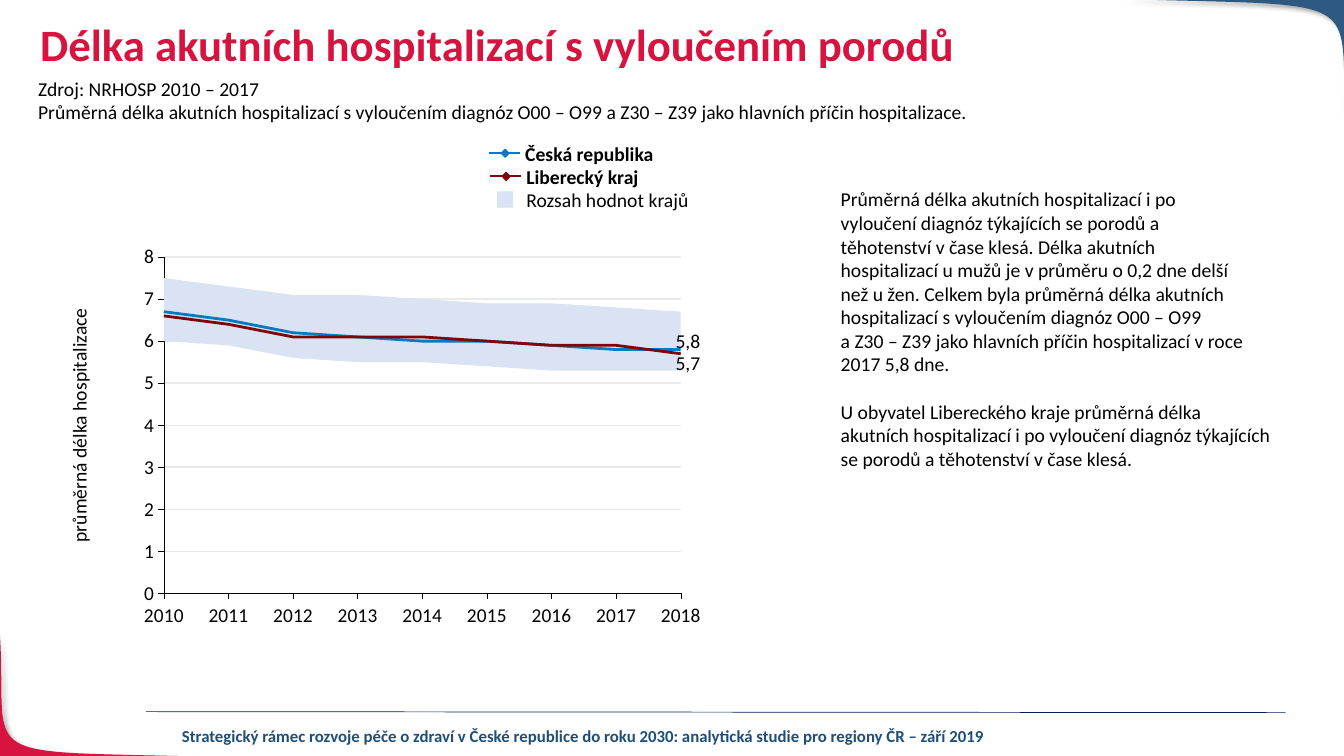
import lxml.etree
import pptx
import pptx.chart.data
import pptx.dml.color
import pptx.enum.chart
import pptx.enum.shapes
import pptx.enum.text
import pptx.oxml.ns
import pptx.util

Inches, Pt = pptx.util.Inches, pptx.util.Pt
Color = pptx.dml.color.RGBColor.from_string
qn = pptx.oxml.ns.qn
Sub = lxml.etree.SubElement
Align, Anchor = pptx.enum.text.PP_ALIGN, pptx.enum.text.MSO_ANCHOR
Shape, Link = pptx.enum.shapes.MSO_SHAPE, pptx.enum.shapes.MSO_CONNECTOR
Mark = pptx.enum.chart.XL_TICK_MARK


class theme:
    font, plain = "Calibri", "Arial"
    black, red, corner, foot, rule = "000000", "D71440", "2E5980", "1F4E79", "002060"
    nation, region, band, grid = "037BC1", "7F0506", "DAE3F3", "EAEAEA"
    title, body, small, tiny = Pt(32), Pt(14), Pt(12), Pt(8)


deck = pptx.Presentation()
deck.slide_width, deck.slide_height = Inches(13.33), Inches(7.5)
slide = deck.slides.add_slide(deck.slide_layouts[6])


def write(text, left, top, width, height, size=theme.body, color=theme.black, bold=False,
          align=Align.LEFT, anchor=Anchor.TOP, inset=True, wrap=True, space=None, turn=0, gap=None):
    """Each line is a paragraph; gap is the number of the line with space before it."""
    box = slide.shapes.add_textbox(Inches(left), Inches(top), Inches(width), Inches(height))
    box.rotation = turn
    frame = box.text_frame
    frame.word_wrap, frame.vertical_anchor = wrap, anchor
    if not inset:
        frame.margin_left = frame.margin_right = frame.margin_top = frame.margin_bottom = 0
    frame.text = text
    for count, para in enumerate(frame.paragraphs):
        para.alignment, para.line_spacing = align, space
        if count == gap:
            para.space_before = Pt(17)
        font = para.runs[0].font
        font.name, font.size, font.bold = theme.font, size, bold
        font.color.rgb = Color(color)


def rule(shapes, start, end, color, weight):
    line = shapes.add_connector(Link.STRAIGHT, *map(Inches, start + end))
    line.line.color.rgb, line.line.width = Color(color), Pt(weight)
    Sub(line._element.spPr, qn("a:effectLst"))


# Corner ornaments: a Bezier edge closed through the slide corner
corners = [
    (((2.13, 7.51), (-0.34, 7.44), (0.08, 7.59), (0, 6.3)), (-0.01, 7.51), theme.red),
    (((11.11, -0.01), (13.7, 0.07), (13.26, -0.1), (13.35, 1.42)), (13.35, -0.01), theme.corner),
]
steps = 40
for curve, tip, color in corners:
    dots = []
    for step in range(steps + 1):
        t = step / steps
        parts = ((1 - t) ** 3, 3 * t * (1 - t) ** 2, 3 * t * t * (1 - t), t ** 3)
        dots.append([Inches(sum(p * c[axis] for p, c in zip(parts, curve))) for axis in (0, 1)])
    dots.append([Inches(v) for v in tip])
    edge = slide.shapes.build_freeform(*dots[0])
    edge.add_line_segments(dots[1:], close=True)
    leaf = edge.convert_to_shape()
    leaf.fill.solid()
    leaf.fill.fore_color.rgb = Color(color)
    leaf.line.fill.background()
    leaf.shadow.inherit = False
    cast = Sub(leaf._element.spPr.find(qn("a:effectLst")), qn("a:outerShdw"),
               blurRad=str(Pt(4)), dist=str(Pt(3)), dir="2700000", algn="tl", rotWithShape="0")
    Sub(Sub(cast, qn("a:srgbClr"), val=theme.black), qn("a:alpha"), val="40000")

# Footer
rule(slide.shapes, (1.45, 7.06), (12.75, 7.07), theme.rule, 0.5)
write("Strategický rámec rozvoje péče o zdraví v České republice do roku 2030: "
      "analytická studie pro regiony ČR – září 2019", 1.68, 7.15, 8.21, 0.3,
      size=theme.small, color=theme.foot, bold=True, align=Align.CENTER)

# Title, source and comment
write("Délka akutních hospitalizací s vyloučením porodů", 0.3, 0.18, 11.5, 0.69,
      size=theme.title, color=theme.red, bold=True, space=0.9)
write("""Zdroj: NRHOSP 2010 – 2017
Průměrná délka akutních hospitalizací s vyloučením diagnóz O00 – O99 a Z30 – Z39 jako hlavních příčin hospitalizace.""",
      0.28, 0.71, 9.53, 0.57)
write("""Průměrná délka akutních hospitalizací i po
vyloučení diagnóz týkajících se porodů a
těhotenství v čase klesá. Délka akutních
hospitalizací u mužů je v průměru o 0,2 dne delší
než u žen. Celkem byla průměrná délka akutních
hospitalizací s vyloučením diagnóz O00 – O99
a Z30 – Z39 jako hlavních příčin hospitalizací v roce
2017 5,8 dne.
U obyvatel Libereckého kraje průměrná délka
akutních hospitalizací i po vyloučení diagnóz týkajících
se porodů a těhotenství v čase klesá.""", 8.24, 1.81, 4.54, 4.56, gap=8)

# Chart: two stacked areas make the band, two lines lie over it
data = pptx.chart.data.CategoryChartData(number_format="0.0")
data.categories = [str(year) for year in range(2010, 2019)]
data.add_series("Minimum krajů", (6, 5.9, 5.6, 5.5, 5.5, 5.4, 5.3, 5.3, 5.3))
data.add_series("Rozsah hodnot krajů", (1.5, 1.4, 1.5, 1.6, 1.5, 1.5, 1.6, 1.5, 1.4))
data.add_series("Česká republika", (6.7, 6.5, 6.2, 6.1, 6, 6, 5.9, 5.8, 5.8))
data.add_series("Liberecký kraj", (6.6, 6.4, 6.1, 6.1, 6.1, 6, 5.9, 5.9, 5.7))
chart = slide.shapes.add_chart(
    pptx.enum.chart.XL_CHART_TYPE.AREA_STACKED,
    Inches(1.03), Inches(2.28), Inches(5.92), Inches(4.17), data).chart
chart.has_legend = chart.has_title = False
chart.font.name, chart.font.size = theme.plain, theme.tiny
chart.font.color.rgb = Color(theme.black)
areas = chart.plots[0]
areas.vary_by_categories = False
base, span, *trends = areas.series
base.format.fill.background()
base.format.line.fill.background()
span.format.fill.solid()
span.format.fill.fore_color.rgb = Color(theme.band)
span.format.line.fill.background()

# Move the trends into a line plot on the same axes
plot = areas._element.getparent()
lines = Sub(plot, qn("c:lineChart"))
areas._element.addnext(lines)
Sub(lines, qn("c:grouping"), val="standard")
Sub(lines, qn("c:varyColors"), val="0")
for trend in trends:
    lines.append(trend._element)
Sub(lines, qn("c:marker"), val="1")
for axis in areas._element.findall(qn("c:axId")):
    Sub(lines, qn("c:axId"), val=axis.get("val"))
for trend, color in zip(chart.plots[1].series, (theme.nation, theme.region)):
    trend.format.line.color.rgb, trend.format.line.width = Color(color), Pt(2)
    trend.marker.style = pptx.enum.chart.XL_MARKER_STYLE.NONE
    trend.smooth = False

# Axes and plot area
years, days = chart.category_axis, chart.value_axis
for axis in (years, days):
    axis.major_tick_mark, axis.minor_tick_mark = Mark.OUTSIDE, Mark.NONE
    axis.format.line.color.rgb, axis.format.line.width = Color(theme.black), Pt(0.25)
    font = axis.tick_labels.font
    font.name, font.size = theme.font, theme.body
    font.color.rgb = Color(theme.black)
years.has_major_gridlines = False
days.minimum_scale, days.maximum_scale, days.major_unit = 0, 8, 1
days.tick_labels.number_format = "#,##0"
days.tick_labels.number_format_is_linked = False
days.has_major_gridlines = True
grid = days.major_gridlines.format.line
grid.color.rgb, grid.width = Color(theme.grid), Pt(1)
days._element.find(qn("c:crossBetween")).set("val", "midCat")
for old in plot.findall(qn("c:layout")):
    plot.remove(old)
layout = Sub(plot, qn("c:layout"))
plot.insert(0, layout)
place = Sub(layout, qn("c:manualLayout"))
for tag, val in (("layoutTarget", "inner"), ("xMode", "edge"), ("yMode", "edge"),
                 ("x", "0.102"), ("y", "0.065"), ("w", "0.879"), ("h", "0.8")):
    Sub(place, qn("c:" + tag), val=val)
write("průměrná délka hospitalizace", -0.49, 4.05, 2.55, 0.34,
      align=Align.CENTER, wrap=False, turn=270)

# Legend and end values
keys = [("Česká republika", 4.85, 1.52, theme.nation), ("Liberecký kraj", 4.86, 1.75, theme.region)]
for name, left, mid, color in keys:
    group = slide.shapes.add_group_shape()
    rule(group.shapes, (left, mid), (left + 0.31, mid), color, 1.5)
    mark = group.shapes.add_shape(Shape.DIAMOND, Inches(left + 0.12), Inches(mid - 0.04),
                                  Inches(0.08), Inches(0.08))
    mark.shadow.inherit = False
    mark.fill.solid()
    mark.fill.fore_color.rgb = mark.line.color.rgb = Color(color)
    mark.line.width = Pt(0.75)
    write(name, left + 0.36, mid - 0.12, 1.93, 0.24, bold=True, anchor=Anchor.MIDDLE, inset=False)
swatch = slide.shapes.add_shape(Shape.RECTANGLE, Inches(4.93), Inches(1.9), Inches(0.16), Inches(0.16))
swatch.shadow.inherit = False
swatch.fill.solid()
swatch.fill.fore_color.rgb = Color(theme.band)
swatch.line.fill.background()
write("Rozsah hodnot krajů", 5.22, 1.86, 1.94, 0.24, anchor=Anchor.MIDDLE, inset=False)
for value, top in (("5,8", 3.26), ("5,7", 3.48)):
    write(value, 6.7, top, 0.72, 0.24, anchor=Anchor.MIDDLE, inset=False)

deck.save("out.pptx")
